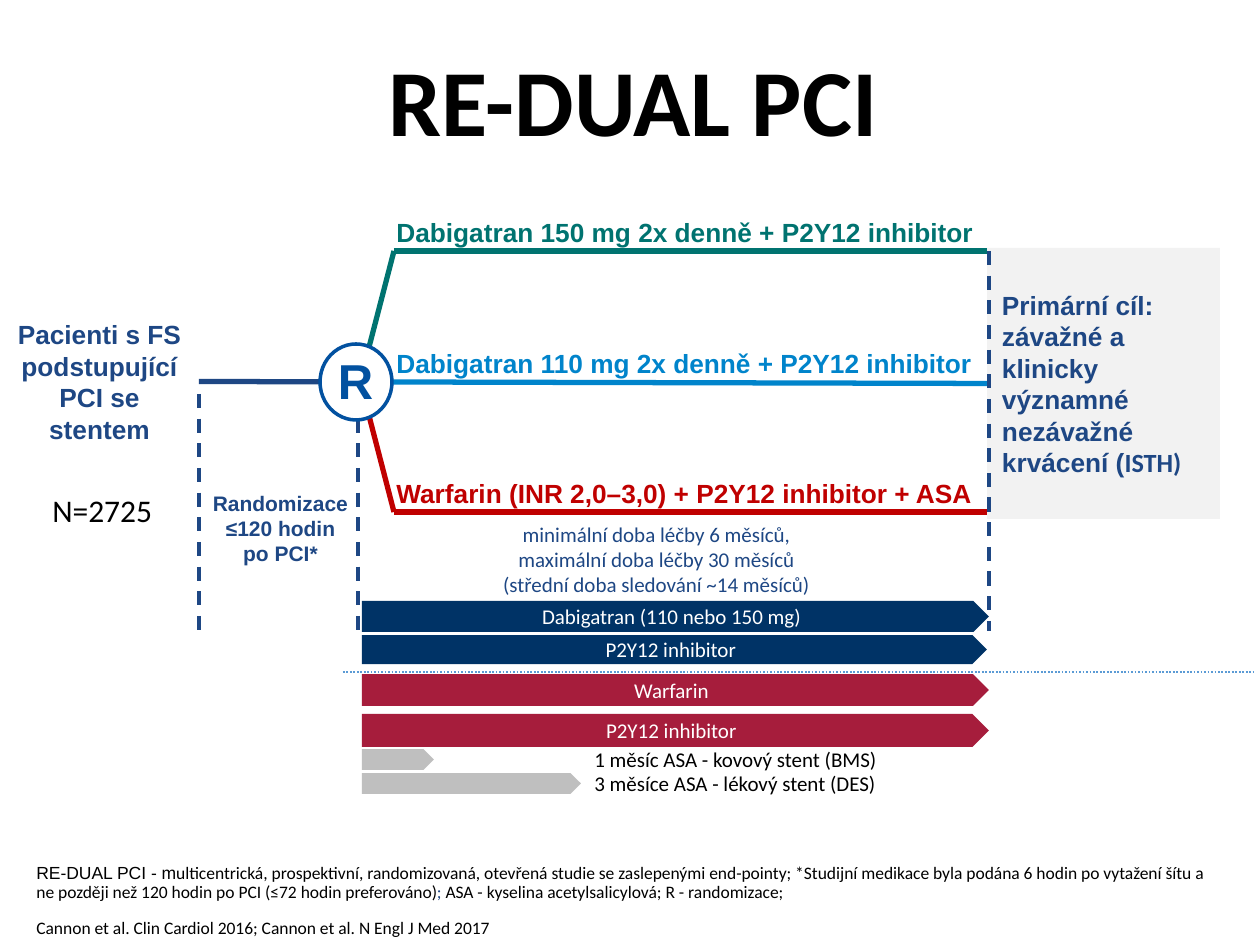
import pptx
import pptx.util
import pptx.oxml
from pptx.dml.color import RGBColor
from pptx.enum.dml import MSO_LINE
from pptx.enum.shapes import MSO_CONNECTOR, MSO_SHAPE
from pptx.enum.text import MSO_ANCHOR, PP_ALIGN

EMU_PER_PX = 914400 / 126

BLACK = RGBColor(0x00, 0x00, 0x00)
WHITE = RGBColor(0xFF, 0xFF, 0xFF)
INDIGO = RGBColor(0x1E, 0x47, 0x84)
TEAL = RGBColor(0x00, 0x73, 0x70)
SKY = RGBColor(0x00, 0x84, 0xCB)
RED = RGBColor(0xC0, 0x00, 0x00)
RING = RGBColor(0x02, 0x51, 0xA0)
NAVY = RGBColor(0x00, 0x33, 0x66)
CRIMSON = RGBColor(0xA6, 0x1D, 0x3C)
SILVER = RGBColor(0xBF, 0xBF, 0xBF)
PALE = RGBColor(0xF2, 0xF2, 0xF2)
DIVIDER = RGBColor(0x5B, 0x9B, 0xD5)

LEFT, CENTER = PP_ALIGN.LEFT, PP_ALIGN.CENTER
TOP, MIDDLE, BOTTOM = MSO_ANCHOR.TOP, MSO_ANCHOR.MIDDLE, MSO_ANCHOR.BOTTOM


def px(length):
    return pptx.util.Emu(round(length * EMU_PER_PX))


class StudySlide:
    """Holds the slide and draws its elements in the shared style."""

    heading_font = "Arial"
    body_font = "Calibri"

    def __init__(self, width, height):
        self.deck = pptx.Presentation()
        self.deck.slide_width, self.deck.slide_height = px(width), px(height)
        self.slide = self.deck.slides.add_slide(self.deck.slide_layouts[6])

    def style_run(self, run, size, color, font, bold=False):
        run.font.size = pptx.util.Pt(size)
        run.font.color.rgb = color
        run.font.name = font
        run.font.bold = bold

    def set_text(self, shape, text, size, color, font, bold=False, align=LEFT,
                 anchor=TOP, wrap=True, insets=None):
        frame = shape.text_frame
        frame.text = text
        frame.word_wrap = wrap
        frame.vertical_anchor = anchor
        if insets:
            (frame.margin_left, frame.margin_top,
             frame.margin_right, frame.margin_bottom) = map(px, insets)
        for paragraph in frame.paragraphs:
            paragraph.alignment = align
            for run in paragraph.runs:
                self.style_run(run, size, color, font, bold)
        return shape

    def extend(self, paragraph, text, size, color, font, bold=False):
        run = paragraph.add_run()
        run.text = text
        self.style_run(run, size, color, font, bold)

    def label(self, box, text, size, color, font, **options):
        shape = self.slide.shapes.add_textbox(*map(px, box))
        return self.set_text(shape, text, size, color, font, **options)

    def block(self, kind, box, fill, outline=None):
        shape = self.slide.shapes.add_shape(kind, *map(px, box))
        shape.shadow.inherit = False
        shape.fill.solid()
        shape.fill.fore_color.rgb = fill
        if outline:
            shape.line.color.rgb = outline
            shape.line.width = pptx.util.Pt(2)
        else:
            shape.line.fill.background()
        return shape

    def bar(self, box, fill, text=None):
        shape = self.block(MSO_SHAPE.PENTAGON, box, fill)
        if text:
            self.set_text(shape, text, 12, WHITE, self.body_font,
                          align=CENTER, anchor=MIDDLE)

    def line(self, start, end, color, width=3, dash=None):
        connector = self.slide.shapes.add_connector(
            MSO_CONNECTOR.STRAIGHT, *map(px, (*start, *end)))
        connector.line.color.rgb = color
        connector.line.width = pptx.util.Pt(width)
        if dash:
            connector.line.dash_style = dash
        connector._element.spPr.append(
            pptx.oxml.parse_xml('<a:effectLst xmlns:a="http://schemas.'
                                'openxmlformats.org/drawingml/2006/main"/>'))
        return connector


def main():
    study = StudySlide(1260, 945)
    arial, calibri = study.heading_font, study.body_font

    # Title
    title = study.label((25, 26, 1216, 159), "RE-DUAL PCI", 54, BLACK, calibri,
                        bold=True, align=CENTER, anchor=MIDDLE)
    title.text_frame.paragraphs[0].line_spacing = 0.9

    # Treatment arm names
    for top, text, color in (
            (210, "Dabigatran 150 mg 2x denně + P2Y12 inhibitor", TEAL),
            (341, "Dabigatran 110 mg 2x denně + P2Y12 inhibitor", SKY),
            (471, "Warfarin (INR 2,0–3,0) + P2Y12 inhibitor + ASA", RED)):
        study.label((384, top, 661, 44), text, 15, color, arial, bold=True)

    # Primary endpoint
    endpoint = study.block(MSO_SHAPE.RECTANGLE, (987, 248, 233, 271), PALE)
    study.set_text(endpoint,
                   "Primární cíl:\n"
                   "závažné a klinicky významné nezávažné krvácení (",
                   15, INDIGO, arial, bold=True, anchor=MIDDLE,
                   insets=(15, 10, 10, 10))
    study.extend(endpoint.text_frame.paragraphs[1], "ISTH)", 15, INDIGO,
                 calibri, bold=True)

    # Patients and randomisation window
    patients = study.label((0, 251, 199, 261),
                           "Pacienti s FS podstupující PCI se stentem", 15,
                           INDIGO, arial, bold=True, align=CENTER,
                           anchor=MIDDLE)
    study.label((40, 485, 137, 50), "N=2725", 18, BLACK, calibri, wrap=False)
    study.label((189, 484, 183, 102),
                "Randomizace\v≤120 hodin\vpo PCI*", 12, INDIGO, arial,
                bold=True, align=CENTER)

    # Time limits
    for x, top in ((199, 394), (358, 394), (989, 251)):
        study.line((x, top), (x, 631), INDIGO, 2, MSO_LINE.DASH)

    # Branches of the study
    entry = study.line((199, 382), (392, 382), INDIGO)
    entry.begin_connect(patients, 3)
    middle_arm = study.line((392, 382), (987, 383), SKY)
    middle_arm.end_connect(endpoint, 1)
    for arm_y, node_y, color in ((251, 355, TEAL), (512, 408, RED)):
        study.line((394, arm_y), (367, node_y), color)
        study.line((394, arm_y), (987, arm_y), color)

    # Randomisation node
    study.block(MSO_SHAPE.OVAL, (320, 344, 72, 76), WHITE, RING)
    study.label((338, 350, 28, 59), "R", 28, RING, arial, bold=True,
                wrap=False, insets=(0, 0, 0, 0))

    # Treatment duration
    study.label((358, 515, 597, 140),
                "minimální doba léčby 6 měsíců,\vmaximální doba léčby 30 měsíců"
                "\v(střední doba sledování ~14 měsíců)",
                12, INDIGO, calibri, align=CENTER)

    # Medication bars
    for top, width, height, fill, text in (
            (601, 627, 31, NAVY, "Dabigatran (110 nebo 150 mg)"),
            (635, 625, 29, NAVY, "P2Y12 inhibitor"),
            (674, 627, 32, CRIMSON, "Warfarin"),
            (714, 627, 33, CRIMSON, "P2Y12 inhibitor"),
            (749, 72, 21, SILVER, None),
            (773, 219, 21, SILVER, None)):
        study.bar((362, top, width, height), fill, text)
    study.line((343, 672), (1254, 672), DIVIDER, 1, MSO_LINE.ROUND_DOT)

    # ASA duration by stent
    for top, text in ((740, "1 měsíc ASA - kovový stent (BMS)"),
                      (764, "3 měsíce ASA - lékový stent (DES)")):
        study.label((582, top, 440, 36), text, 12, BLACK, calibri)

    # Footnote and references
    footnote = study.label(
        (24, 864, 1211, 81),
        "RE-DUAL PCI - m\n"
        "Cannon et al. Clin Cardiol 2016; Cannon et al. N Engl J Med 2017",
        10, BLACK, calibri, anchor=BOTTOM)
    summary, references = footnote.text_frame.paragraphs
    summary.runs[0].font.name = arial
    for text, color in (
            ("ulticentrická, prospektivní, randomizovaná, otevřená studie se "
             "zaslepenými end-pointy; *Studijní medikace byla podána 6 hodin po "
             "vytažení šítu a ne později než 120 hodin po PCI (≤72 hodin "
             "preferováno)", BLACK),
            ("; ", INDIGO),
            ("ASA - kyselina acetylsalicylová; R - randomizace;", BLACK)):
        study.extend(summary, text, 10, color, calibri)
    for paragraph in (summary, references):
        paragraph.line_spacing = 0.9
        paragraph.space_before = pptx.util.Pt(10)

    study.deck.save("out.pptx")


if __name__ == "__main__":
    main()
